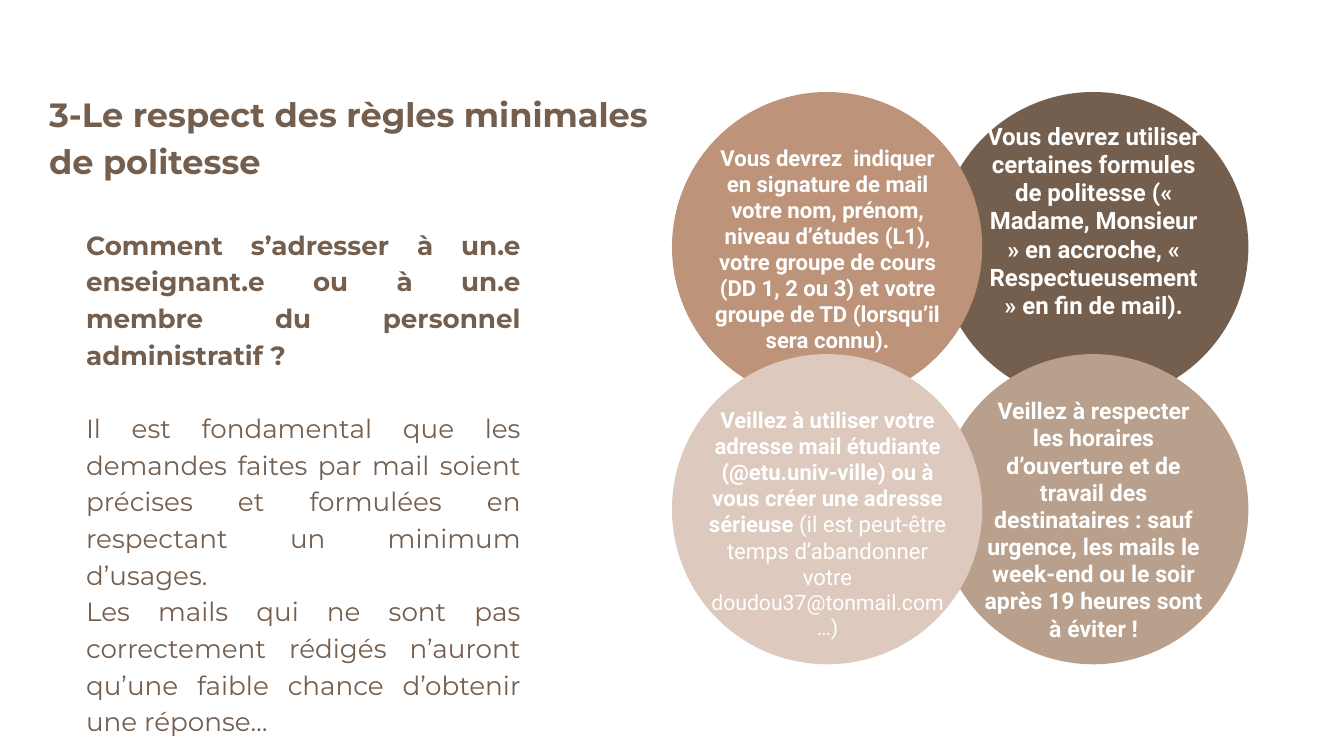
"""Build the slide on the rules of politeness in student mails."""
from dataclasses import dataclass

from lxml.etree import SubElement
from pptx import Presentation
from pptx.dml.color import RGBColor
from pptx.enum.shapes import MSO_SHAPE
from pptx.enum.text import MSO_ANCHOR, MSO_AUTO_SIZE, PP_ALIGN
from pptx.oxml.ns import qn
from pptx.slide import Slide
from pptx.text.text import TextFrame
from pptx.util import Pt

BROWN = RGBColor(0x74, 0x5E, 0x4D)
TAN = RGBColor(0xB8, 0xA0, 0x8C)
CLAY = RGBColor(0xBD, 0x94, 0x79)
PINK = RGBColor(0xDD, 0xC9, 0xBD)
WHITE = RGBColor(0xFF, 0xFF, 0xFF)

LEFT, TOP = 720, 98.6
STEP_X, STEP_Y = 285.2, 280.8
DISC = 332.4
INSET = {0: 37.4, 1: 47.4}
WIDTH = {0: 258.5, 1: 238.3}


@dataclass(frozen=True)
class Run:
    text: str
    bold: bool = True


@dataclass(frozen=True)
class Para:
    runs: tuple[Run, ...]
    size: float
    line: float
    after: float = 0


@dataclass(frozen=True)
class Rule:
    col: int
    row: int
    fill: RGBColor
    top: float
    high: float
    paras: tuple[Para, ...]


RULES = (
    Rule(1, 0, BROWN, 31.7, 268.6, (Para((Run(
        "Vous devrez utiliser certaines formules de politesse (« Madame, Monsieur » "
        "en accroche, « Respectueusement » en fin de mail)."),), 25.7, 30.3),)),
    Rule(1, 1, TAN, 46.1, 286.6, (Para((Run(
        "Veillez à respecter les horaires d’ouverture et de travail des destinataires : "
        "sauf urgence, les mails le week-end ou le soir après 19 heures sont à éviter !"),),
        24.7, 29.1),)),
    Rule(0, 0, CLAY, 56.2, 250.6, (Para((Run(
        "Vous devrez  indiquer en signature de mail votre nom, prénom, niveau d’études (L1), "
        "votre groupe de cours (DD 1, 2 ou 3) et votre groupe de TD (lorsqu’il sera connu)."),),
        23.7, 27.9),)),
    Rule(0, 1, PINK, 56.9, 275, (
        Para((
            Run("Veillez à utiliser votre adresse mail étudiante (@etu.univ-ville) "
                "ou à vous créer une adresse sérieuse "),
            Run("(il est peut-être temps d’abandonner votre", False)), 23.7, 27.9),
        Para((Run("doudou37@tonmail.com…)", False),), 22.7, 26.8))),
)

TITLE = (Para((Run("3-Le respect des règles minimales de politesse"),), 36, 50.4),)
BODY = (
    Para((Run("Comment s’adresser à un.e enseignant.e ou à un.e membre du personnel "
              "administratif ?"),), 28.1, 39.3, 39.3),
    Para((Run("Il est fondamental que les demandes faites par mail soient précises et "
              "formulées en respectant un minimum d’usages.", False),), 28.1, 39.3),
    Para((Run("Les mails qui ne sont pas correctement rédigés n’auront qu’une faible "
              "chance d’obtenir une réponse…", False),), 28.1, 39.3),
)


def write(frame: TextFrame, paras: tuple[Para, ...], face: str,
          tint: RGBColor, align: PP_ALIGN) -> None:
    """Fill a text frame run by run."""
    frame.word_wrap = True
    frame.auto_size = MSO_AUTO_SIZE.NONE
    frame.vertical_anchor = MSO_ANCHOR.TOP
    frame.margin_left = frame.margin_right = frame.margin_top = frame.margin_bottom = 0
    for i, para in enumerate(paras):
        item = frame.add_paragraph() if i else frame.paragraphs[0]
        item.alignment = align
        item.line_spacing = Pt(para.line)
        item.space_before = Pt(0)
        item.space_after = Pt(para.after)
        for part in para.runs:
            run = item.add_run()
            run.text = part.text
            run.font.name = face
            run.font.size = Pt(para.size)
            run.font.bold = part.bold
            run.font.color.rgb = tint


def place(shape, left: float, top: float, width: float, high: float) -> None:
    """Move and size a shape, in points."""
    shape.left, shape.top = Pt(left), Pt(top)
    shape.width, shape.height = Pt(width), Pt(high)


def plain(frame: TextFrame) -> None:
    """Take bullets and indents off a list."""
    for item in frame.paragraphs:
        props = item._p.get_or_add_pPr()
        props.set("marL", "0")
        props.set("indent", "0")
        SubElement(props, qn("a:buNone"))


def draw_disc(slide: Slide, rule: Rule) -> None:
    """Draw the disc behind a rule."""
    disc = slide.shapes.add_shape(
        MSO_SHAPE.OVAL, Pt(LEFT + rule.col * STEP_X), Pt(TOP + rule.row * STEP_Y),
        Pt(DISC), Pt(DISC))
    disc.shadow.inherit = False
    disc.fill.solid()
    disc.fill.fore_color.rgb = rule.fill
    disc.line.fill.background()


def draw_text(slide: Slide, rule: Rule) -> None:
    """Write a rule over its disc."""
    box = slide.shapes.add_textbox(
        Pt(LEFT + rule.col * STEP_X + INSET[rule.col]),
        Pt(TOP + rule.row * STEP_Y + rule.top), Pt(WIDTH[rule.col]), Pt(rule.high))
    write(box.text_frame, rule.paras, "Roboto", WHITE, PP_ALIGN.CENTER)


def main() -> None:
    """Build and save the slide."""
    deck = Presentation()
    deck.slide_width, deck.slide_height = Pt(1440), Pt(810)
    slide = deck.slides.add_slide(deck.slide_layouts[1])
    title, body = slide.placeholders
    place(title, 52.6, 93.6, 645.8, 98.6)
    write(title.text_frame, TITLE, "Montserrat", BROWN, PP_ALIGN.LEFT)
    place(body, 92.2, 239.8, 465.8, 570)
    write(body.text_frame, BODY, "Montserrat", BROWN, PP_ALIGN.JUSTIFY)
    plain(body.text_frame)
    for rule in RULES:
        draw_disc(slide, rule)
    for rule in RULES:
        draw_text(slide, rule)
    deck.save("out.pptx")


if __name__ == "__main__":
    main()
